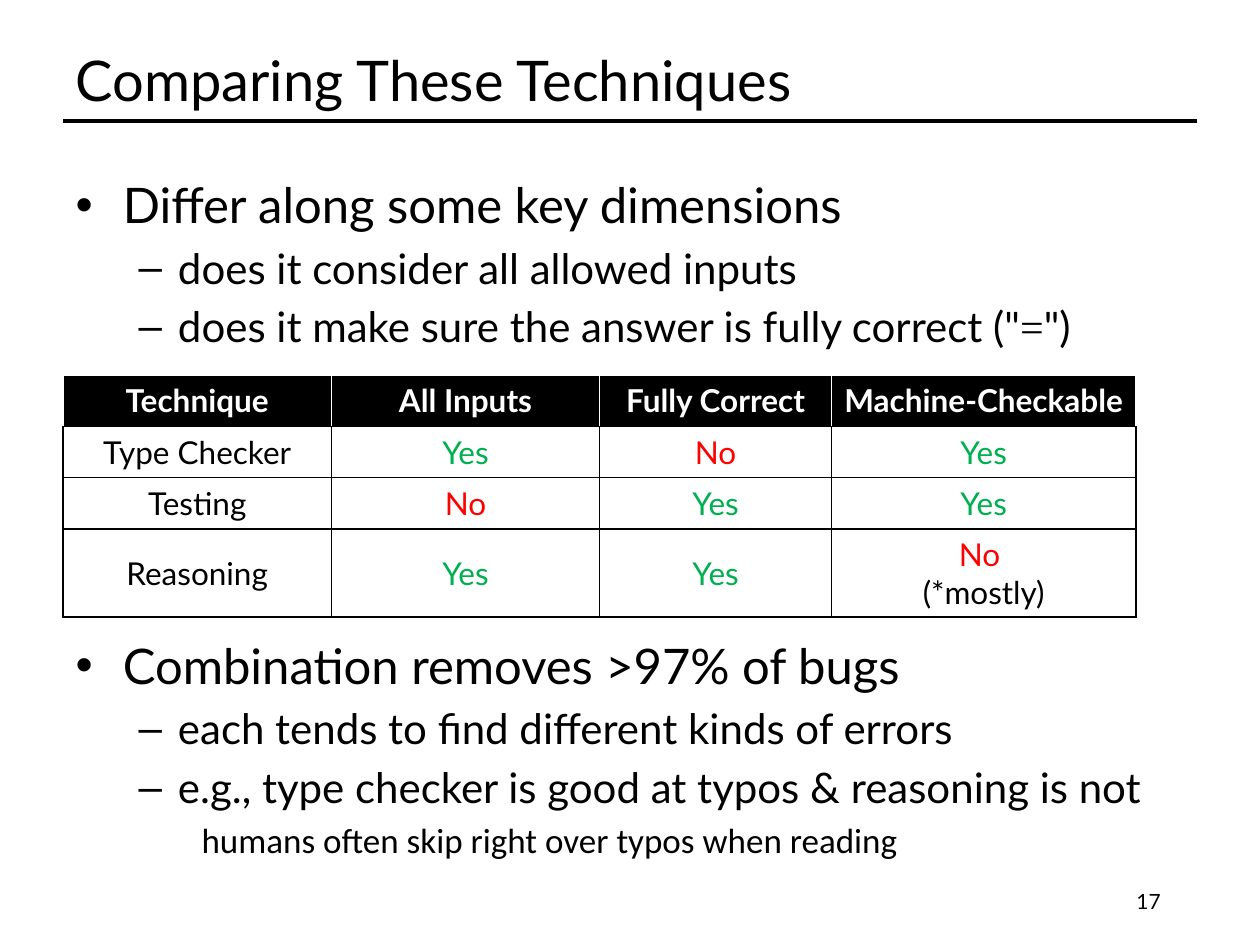
from lxml import etree
from pptx import Presentation
from pptx import util as u
from pptx.dml.color import RGBColor
from pptx.enum import shapes, text
from pptx.oxml.ns import qn

BLACK, WHITE = "000000", "FFFFFF"
ANSWERS = {"Yes": "00B050", "No": "FF0000"}
TITLE = "Comparing These Techniques"
NUMBER = "17"
# (level, [(words, font), ...], space before in points or None)
BODY = [
    (0, [("Differ along some key dimensions", "Lato")], None),
    (1, [("does it consider all allowed inputs", "Lato")], None),
    (1, [('does it make sure the answer is fully correct ("', "Lato"),
         ("=", "Times New Roman"), ('")', "Lato")], None),
    (0, [("Combination removes >97% of bugs", "Lato")], 162.4),
    (1, [("each tends to find different kinds of errors", "Lato")], None),
    (1, [("e.g., type checker is good at typos & reasoning is not", "Lato")], None),
    (2, [("humans often skip right over typos when reading", "Calibri")], None),
]
LEVEL_SIZES = (28, 24, 20)
TABLE = [
    ("Technique", "All Inputs", "Fully Correct", "Machine-Checkable"),
    ("Type Checker", "Yes", "No", "Yes"),
    ("Testing", "No", "Yes", "Yes"),
    ("Reasoning", "Yes", "Yes", "No \v(*mostly)"),
]
COL_WIDTHS = (5.41, 5.41, 4.67, 6.14)
ROW_HEIGHT = 1.03
LEFT, WIDTH = 1.27, 22.86


def rgb(value):
    return RGBColor.from_string(value)


def style(r, size, color=BLACK, font="Lato", bold=False):
    r.font.size, r.font.name, r.font.bold = u.Pt(size), font, bold
    r.font.color.rgb = rgb(color)


def place(sp, left, top, width, height):
    sp.left, sp.top, sp.width, sp.height = map(u.Cm, (left, top, width, height))


def set_borders(cell, colors):
    tc_pr = cell._tc.get_or_add_tcPr()
    for i, (side, color) in enumerate(zip("LRTB", colors)):
        ln = etree.Element(qn(f"a:ln{side}"), w=str(u.Pt(1)))
        fill = etree.SubElement(ln, qn("a:solidFill"))
        etree.SubElement(fill, qn("a:srgbClr"), val=color)
        tc_pr.insert(i, ln)


def add_title(s):
    sp = s.shapes.title
    place(sp, LEFT, 0.76, WIDTH, 1.68)
    tf = sp.text_frame
    tf.text = TITLE
    tf.auto_size = text.MSO_AUTO_SIZE.NONE
    tf.vertical_anchor = text.MSO_ANCHOR.MIDDLE
    tf.paragraphs[0].alignment = text.PP_ALIGN.LEFT
    style(tf.paragraphs[0].runs[0], 32)


def add_rule(s):
    y = u.Cm(2.44)
    line = s.shapes.add_connector(shapes.MSO_CONNECTOR.STRAIGHT,
                                  u.Cm(LEFT), y, u.Cm(LEFT + WIDTH), y)
    line.line.width = u.Pt(2)
    line.line.color.rgb = rgb(BLACK)
    etree.SubElement(line._element.spPr, qn("a:effectLst"))


def add_body(s):
    sp = s.placeholders[1]
    place(sp, LEFT, 3.4, WIDTH, 14.27)
    tf = sp.text_frame
    tf.auto_size = text.MSO_AUTO_SIZE.NONE
    for i, (level, runs, gap) in enumerate(BODY):
        p = tf.add_paragraph() if i else tf.paragraphs[0]
        p.level = level
        if gap:
            p.space_before = u.Pt(gap)
        if level == 2:
            p_pr = p._p.get_or_add_pPr()
            p_pr.set("marL", str(u.Cm(2.54)))
            p_pr.set("indent", "0")
            etree.SubElement(p_pr, qn("a:buNone"))
        for words, font in runs:
            r = p.add_run()
            r.text = words
            style(r, LEVEL_SIZES[level], font=font)


def add_comparison(s):
    frame = s.shapes.add_table(len(TABLE), len(COL_WIDTHS), u.Cm(LEFT), u.Cm(7.57),
                               u.Cm(sum(COL_WIDTHS)), u.Cm(ROW_HEIGHT * len(TABLE)))
    table = frame.table
    table.first_row = table.horz_banding = False
    for col, width in zip(table.columns, COL_WIDTHS):
        col.width = u.Cm(width)
    for i, row in enumerate(TABLE):
        table.rows[i].height = u.Cm(ROW_HEIGHT)
        for j, words in enumerate(row):
            cell = table.cell(i, j)
            p = cell.text_frame.paragraphs[0]
            p.text = words
            p.alignment = text.PP_ALIGN.CENTER
            header = i == 0
            for r in p.runs:
                color = WHITE if header else ANSWERS.get(r.text.strip(), BLACK)
                style(r, 18, color, bold=header)
            if header:
                cell.fill.solid()
                cell.fill.fore_color.rgb = rgb(BLACK)
            else:
                cell.fill.background()
                cell.vertical_anchor = text.MSO_ANCHOR.MIDDLE
            set_borders(cell, [WHITE] * 3 + [BLACK] if header else [BLACK] * 4)


def add_number(s):
    sp = s.shapes.add_textbox(u.Cm(17.93), u.Cm(17.65), u.Cm(5.72), u.Cm(1.02))
    tf = sp.text_frame
    tf.word_wrap = True
    tf.vertical_anchor = text.MSO_ANCHOR.MIDDLE
    tf.text = NUMBER
    tf.paragraphs[0].alignment = text.PP_ALIGN.RIGHT
    style(tf.paragraphs[0].runs[0], 12)


def main():
    """Build the slide that compares ways of finding bugs."""
    prs = Presentation()
    prs.slide_width, prs.slide_height = u.Cm(25.4), u.Cm(19.05)
    s = prs.slides.add_slide(prs.slide_layouts[1])
    for add in (add_rule, add_title, add_body, add_comparison, add_number):
        add(s)
    prs.save("out.pptx")


if __name__ == "__main__":
    main()
